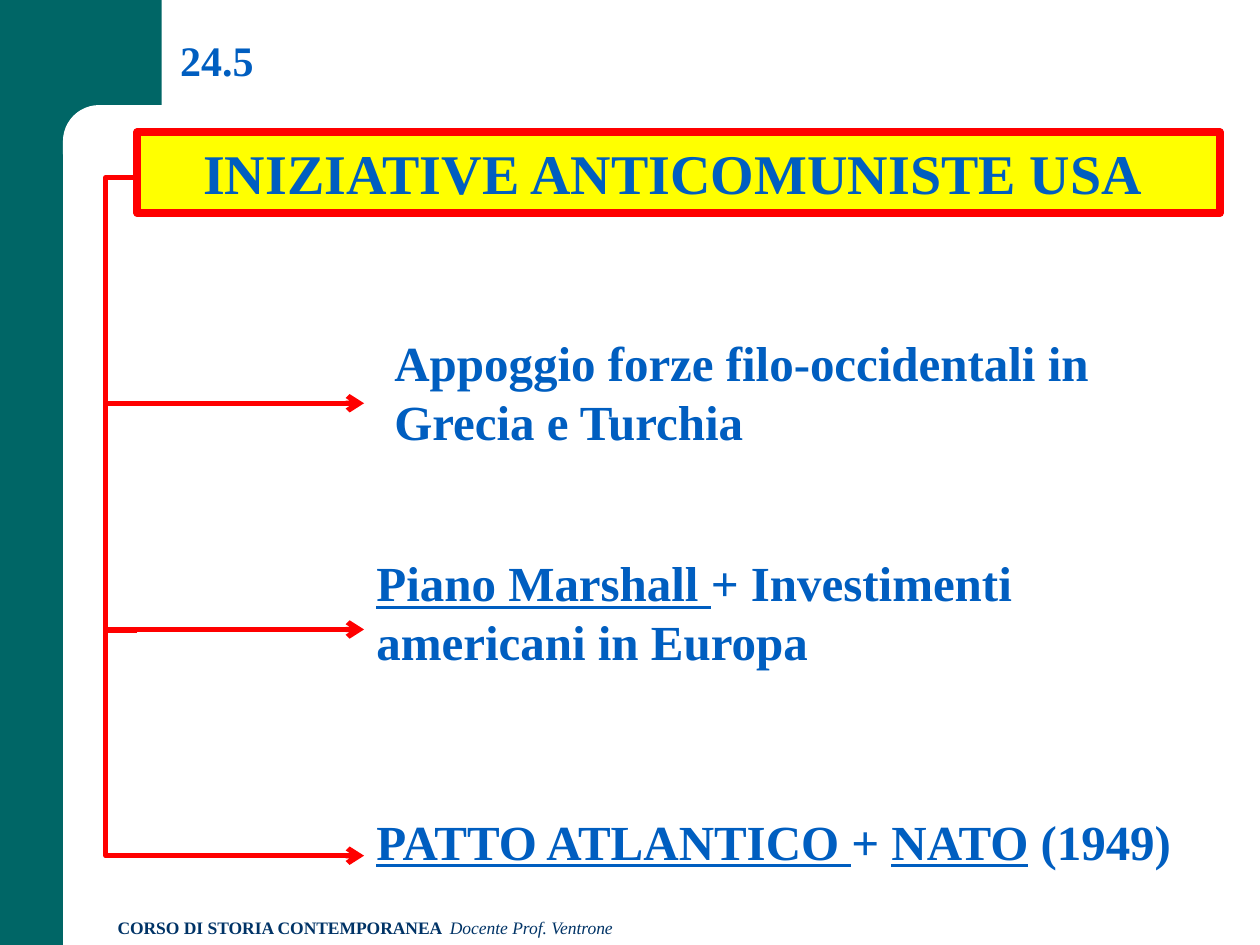
import pptx
import pptx.dml.color
import pptx.enum.shapes
import pptx.enum.text
import pptx.util
from lxml import etree
from pptx.oxml.ns import qn

Cm, Pt = pptx.util.Cm, pptx.util.Pt
SHAPE = pptx.enum.shapes.MSO_SHAPE
ALIGN = pptx.enum.text.PP_ALIGN
ANCHOR = pptx.enum.text.MSO_ANCHOR

# Content
TEAL, WHITE, YELLOW, RED = "006666", "FFFFFF", "FFFF00", "FF0000"
BLUE, NAVY = "005EC0", "003366"
TITLE = "INIZIATIVE ANTICOMUNISTE USA "
NUMBER = "24.5"
FOOTER = [("CORSO DI STORIA CONTEMPORANEA  ", "b"), ("Docente Prof. Ventrone", "i")]
INITIATIVES = [  # left, top, width, height in cm, then spans with their styles
    (7.7, 6.58, 16.89, 2.64, [("Appoggio forze filo-occidentali in Grecia e Turchia", "b")]),
    (7.34, 11.02, 13.36, 2.64, [("Piano Marshall ", "bu"),
                                ("+ Investimenti americani in Europa", "b")]),
    (7.34, 16.23, 17.55, 1.45, [("PATTO ATLANTICO ", "bu"), ("+ ", "b"),
                                ("NATO", "bu"), (" (1949)", "b")]),
]

# Elbow arrows, in cm
ARROW_LEFT, ARROW_RIGHT = 2.77, 7.34
FIRST_TOP, PITCH, DROP = 3.58, 4.56, 4.55
BEND = -0.139  # share of the arrow's width, left of its start


def colour(value):
    return pptx.dml.color.RGBColor.from_string(value)


def add_block(page, kind, place, fill, line=None, width=0):
    block = page.shapes.add_shape(kind, *map(Cm, place))
    block.shadow.inherit = False
    block.fill.solid()
    block.fill.fore_color.rgb = colour(fill)
    if line:
        block.line.color.rgb = colour(line)
        block.line.width = Pt(width)
    else:
        block.line.fill.background()
    return block


def write(box, spans, size, ink=BLUE, align=ALIGN.LEFT, anchor=ANCHOR.TOP, spacing=None):
    frame = box.text_frame
    frame.word_wrap = True
    frame.vertical_anchor = anchor
    para = frame.paragraphs[0]
    para.alignment = align
    para.line_spacing = spacing
    for text, style in spans:
        span = para.add_run()
        span.text = text
        font = span.font
        font.name, font.size = "Times New Roman", Pt(size)
        font.bold, font.italic = "b" in style, "i" in style
        font.underline = "u" in style
        font.color.rgb = colour(ink)


def add_text(page, place, spans, **style):
    write(page.shapes.add_textbox(*map(Cm, place)), spans, **style)


def add_elbow_arrow(page, top):
    arrow = page.shapes.add_connector(
        pptx.enum.shapes.MSO_CONNECTOR.ELBOW,
        Cm(ARROW_LEFT), Cm(top), Cm(ARROW_RIGHT), Cm(top + DROP))
    arrow.line.color.rgb = colour(RED)
    arrow.line.width = Pt(3)
    properties = arrow._element.spPr
    guides = properties.find(qn("a:prstGeom")).get_or_add_avLst()
    etree.SubElement(guides, qn("a:gd"), name="adj1", fmla=f"val {round(BEND * 100000)}")
    etree.SubElement(properties.find(qn("a:ln")), qn("a:tailEnd"), type="arrow")
    etree.SubElement(properties, qn("a:effectLst"))


deck = pptx.Presentation()
deck.slide_width, deck.slide_height = Cm(25.4), Cm(19.05)
page = deck.slides.add_slide(deck.slide_layouts[6])

# Teal corner with a rounded inner edge
add_block(page, SHAPE.RECTANGLE, (0, 0, 1.27, 19.05), TEAL)
add_block(page, SHAPE.RECTANGLE, (0, 0, 3.26, 2.97), TEAL)
corner = add_block(page, SHAPE.ROUNDED_RECTANGLE, (1.27, 2.12, 15.03, 1.69), WHITE)
corner.adjustments[0] = 0.43

# Footer and title
add_text(page, (2.12, 18.36, 15.66, 0.69), FOOTER, size=10, ink=NAVY)
title = add_block(page, SHAPE.RECTANGLE, (2.77, 2.67, 21.82, 1.63), YELLOW, RED, 4.5)
write(title, [(TITLE, "b")], size=32, align=ALIGN.CENTER)

# Initiatives, each with its arrow
for index, (*place, spans) in enumerate(INITIATIVES):
    add_text(page, place, spans, size=28)
    add_elbow_arrow(page, FIRST_TOP + index * PITCH)

# Slide number
add_text(page, (3.38, 0.58, 2.44, 1.27), [(NUMBER, "b")], size=24,
         anchor=ANCHOR.BOTTOM, spacing=0.9)

deck.save("out.pptx")
